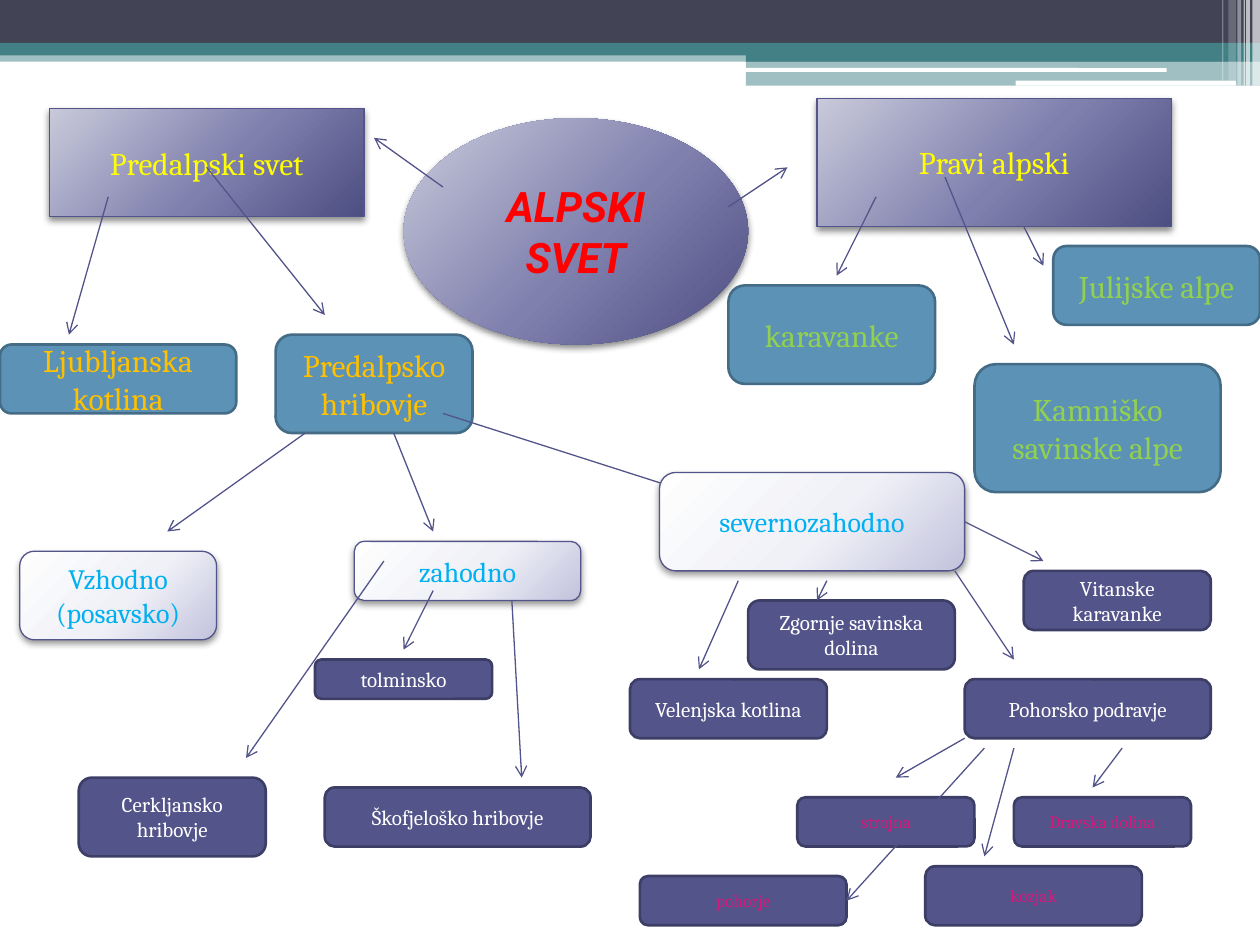
from dataclasses import dataclass

from lxml import etree
from pptx import Presentation
from pptx.dml.color import RGBColor
from pptx.enum.shapes import MSO_CONNECTOR, MSO_SHAPE
from pptx.enum.text import MSO_ANCHOR, PP_ALIGN
from pptx.oxml import parse_xml
from pptx.oxml.ns import nsdecls, qn
from pptx.util import Inches, Pt

RECTANGLE, ROUNDED, OVAL = MSO_SHAPE.RECTANGLE, MSO_SHAPE.ROUNDED_RECTANGLE, MSO_SHAPE.OVAL
STRAIGHT, MIDDLE, CENTER = MSO_CONNECTOR.STRAIGHT, MSO_ANCHOR.MIDDLE, PP_ALIGN.CENTER
BLANK_LAYOUT, RIGHT_SIDE = 6, 3
SLIDE_BOX = (0, 0, 10, 7.5)
PURPLE, TEAL, WHITE = "53548A", "438086", "FFFFFF"
DARK_STOPS = [(0, "C9C9DA"), (55, "7F80AE"), (100, "4D4E81")]
PALE_STOPS = [(0, "FEFEFE"), (55, "F0F1F7"), (100, "C2C2DD")]

DARK = {"stops": DARK_STOPS, "shadow": 45, "line": (PURPLE, 0.75)}
BLUE = {"kind": ROUNDED, "fill": "5C92B5", "line": ("446C86", 1.5)}
NAVY = {"kind": ROUNDED, "fill": PURPLE, "line": ("3D3E66", 1.5)}
STYLES = {
    "centre": DARK | {"kind": OVAL, "line": None, "color": "FF0000",
                      "font": {"size": Pt(24), "name": "Roboto", "bold": True, "italic": True}},
    "region": DARK | {"kind": RECTANGLE, "color": "FFFF00", "font": {"size": Pt(18)}},
    "foothill": BLUE | {"color": "FFC000", "font": {"size": Pt(18)}},
    "alp": BLUE | {"color": "92D050", "font": {"size": Pt(18)}},
    "part": {"kind": ROUNDED, "stops": PALE_STOPS, "shadow": 40, "line": (PURPLE, 0.75),
             "color": "00B0F0", "font": {"size": Pt(16)}},
    "place": NAVY | {"color": WHITE, "font": {"size": Pt(12)}},
    "detail": NAVY | {"color": "D61A7C", "font": {"size": Pt(10)}},
}

HEADER_BANDS = [
    (RECTANGLE, (0, 40, 1000, 9), TEAL, 50),
    (RECTANGLE, (0, 0, 1000, 34), "424456", 100),
    (RECTANGLE, (0, 34, 1000, 10), TEAL, 100),
    (RECTANGLE, (592, 39, 408, 10), TEAL, 100),
    (RECTANGLE, (592, 48, 408, 20), TEAL, 50),
    (ROUNDED, (591, 54, 335, 3), WHITE, 100),
    (ROUNDED, (806, 64, 175, 4), WHITE, 100),
]
HEADER_STRIPES = [(994, 6, 68, 65), (989, 3, 68, 65), (987, 1, 68, 60),
                  (982, 3, 68, 40), (975, 6, 64, 20), (970, 1, 64, 30)]

REGIONS = {
    "nodes": [("ALPSKI SVET", "centre", (41, 12, 35, 23)),
              ("Predalpski svet", "region", (5, 11, 32, 11)),
              ("Pravi alpski", "region", (83, 10, 36, 13))],
    "arrows": [(74, 21, 80, 17), (45, 19, 38, 14), (11, 20, 7, 34), (21, 17, 33, 32)],
}
RANGES = {
    "nodes": [("Ljubljanska kotlina", "foothill", (0, 35, 24, 7)),
              ("Predalpsko hribovje", "foothill", (28, 34, 20, 10)),
              ("karavanke", "alp", (74, 29, 21, 10)),
              ("Julijske alpe", "alp", (107, 25, 21, 8)),
              ("Kamniško savinske alpe", "alp", (99, 37, 25, 13))],
    "arrows": [(89, 20, 85, 28), (104, 23, 106, 27), (96, 18, 103, 35),
               (31, 44, 17, 54), (40, 44, 44, 54), (45, 42, 70, 50)],
}
WEST = {
    "nodes": [("Vzhodno (posavsko)", "part", (2, 56, 20, 9)),
              ("zahodno", "part", (36, 55, 23, 6)),
              ("severnozahodno", "part", (67, 48, 31, 10)),
              ("tolminsko", "place", (32, 67, 18, 4)),
              ("Cerkljansko hribovje", "place", (8, 79, 19, 8)),
              ("Škofjeloško hribovje", "place", (33, 80, 27, 6))],
    "arrows": [(52, 61, 53, 79), (44, 60, 41, 66), (39, 57, 25, 77)],
}
NORTHWEST = {
    "nodes": [("Velenjska kotlina", "place", (64, 69, 20, 6)),
              ("Zgornje savinska dolina", "place", (76, 61, 21, 7)),
              ("Vitanske karavanke", "place", (104, 58, 19, 6)),
              ("Pohorsko podravje", "place", (98, 69, 25, 6))],
    "arrows": [(75, 59, 71, 68), (84, 59, 83, 61), (98, 53, 106, 57), (97, 58, 103, 67)],
}
PODRAVJE = {
    "nodes": [("strojna", "detail", (81, 81, 18, 5)),
              ("Dravska dolina", "detail", (103, 81, 18, 5)),
              ("pohorje", "detail", (65, 89, 21, 5)),
              ("kozjak", "detail", (94, 88, 22, 6))],
    "arrows": [(98, 75, 91, 79), (114, 76, 111, 80), (103, 76, 100, 87), (100, 76, 86, 91.5)],
}


@dataclass
class Grid:
    """Divides a box in inches into equal columns and rows."""
    box: tuple
    columns: int
    rows: int

    def point(self, column, row):
        """Return the slide position of a grid point."""
        left, top, width, height = self.box
        return Inches(left + width * column / self.columns), Inches(top + height * row / self.rows)

    def area(self, column, row, wide, high):
        """Return left, top, width and height of a grid area."""
        left, top = self.point(column, row)
        right, bottom = self.point(column + wide, row + high)
        return left, top, right - left, bottom - top


def rgb(value):
    """Turn a hex string into a colour."""
    return RGBColor.from_string(value)


def set_attributes(target, values):
    """Set each attribute named in a dict."""
    for name, value in values.items():
        setattr(target, name, value)


def fill_solid(shape, color, opacity=100):
    """Fill a shape with one colour at a percentage of opacity."""
    shape.fill.solid()
    shape.fill.fore_color.rgb = rgb(color)
    if opacity < 100:
        element = shape._element.spPr.find(".//" + qn("a:srgbClr"))
        etree.SubElement(element, qn("a:alpha"), val=str(opacity * 1000))


def fill_gradient(shape, stops):
    """Fill a shape with a circular gradient from beyond its upper left."""
    marks = "".join(f'<a:gs pos="{share * 1000}"><a:srgbClr val="{color}"/></a:gs>'
                    for share, color in stops)
    shape._element.spPr.insert(2, parse_xml(
        f'<a:gradFill {nsdecls("a")} rotWithShape="1"><a:gsLst>{marks}</a:gsLst>'
        '<a:path path="circle"><a:fillToRect l="-40000" t="-90000" r="140000" b="190000"/>'
        '</a:path></a:gradFill>'))


def add_shadow(shape, opacity):
    """Add a soft black shadow below a shape."""
    shape._element.spPr.find(qn("a:effectLst")).append(parse_xml(
        f'<a:outerShdw {nsdecls("a")} blurRad="{Pt(4)}" dist="{Pt(2)}" dir="5400000" '
        f'rotWithShape="0"><a:srgbClr val="000000"><a:alpha val="{opacity * 1000}"/>'
        '</a:srgbClr></a:outerShdw>'))


def add_plain_shape(slide, kind, area, line=None):
    """Add a shape without shadow, outlined only when a line is given."""
    shape = slide.shapes.add_shape(kind, *area)
    shape.shadow.inherit = False
    if line:
        shape.line.color.rgb, shape.line.width = rgb(line[0]), Pt(line[1])
    else:
        shape.line.fill.background()
    return shape


def add_node(slide, area, text, style):
    """Add one labelled node of the concept map."""
    shape = add_plain_shape(slide, style["kind"], area, style["line"])
    if "stops" in style:
        fill_gradient(shape, style["stops"])
        add_shadow(shape, style["shadow"])
    else:
        fill_solid(shape, style["fill"])
    set_attributes(shape.text_frame, {"word_wrap": True, "vertical_anchor": MIDDLE})
    paragraph = shape.text_frame.paragraphs[0]
    set_attributes(paragraph, {"text": text, "alignment": CENTER})
    font = paragraph.runs[0].font
    set_attributes(font, {"name": "Cambria"} | style["font"])
    font.color.rgb = rgb(style["color"])
    return shape


def add_arrow(slide, start, end):
    """Add a thin line with an open arrowhead at its end."""
    arrow = slide.shapes.add_connector(STRAIGHT, *start, *end)
    arrow.line.color.rgb, arrow.line.width = rgb(PURPLE), Pt(0.75)
    etree.SubElement(arrow.line._get_or_add_ln(), qn("a:tailEnd"), type="arrow")
    etree.SubElement(arrow._element.spPr, qn("a:effectLst"))
    return arrow


def draw_header(slide, box):
    """Draw the bands and translucent stripes along the top of the box."""
    grid = Grid(box, 1000, 750)
    stripes = [(RECTANGLE, (column, 0, wide, high), WHITE, opacity)
               for column, wide, high, opacity in HEADER_STRIPES]
    for kind, place, color, opacity in HEADER_BANDS + stripes:
        fill_solid(add_plain_shape(slide, kind, grid.area(*place)), color, opacity)


def draw_level(slide, box, level):
    """Draw one level of the map and return its nodes and arrows."""
    grid = Grid(box, 128, 96)
    nodes = {text: add_node(slide, grid.area(*place), text, STYLES[style])
             for text, style, place in level["nodes"]}
    arrows = [add_arrow(slide, grid.point(*ends[:2]), grid.point(*ends[2:]))
              for ends in level["arrows"]]
    return nodes, arrows


def main():
    """Build the concept map and save it."""
    presentation = Presentation()
    presentation.slide_width, presentation.slide_height = Inches(10), Inches(7.5)
    slide = presentation.slides.add_slide(presentation.slide_layouts[BLANK_LAYOUT])
    draw_header(slide, SLIDE_BOX)
    for level in (REGIONS, RANGES):
        draw_level(slide, SLIDE_BOX, level)
    parts, _ = draw_level(slide, SLIDE_BOX, WEST)
    _, place_arrows = draw_level(slide, SLIDE_BOX, NORTHWEST)
    place_arrows[2].begin_connect(parts["severnozahodno"], RIGHT_SIDE)
    details, detail_arrows = draw_level(slide, SLIDE_BOX, PODRAVJE)
    detail_arrows[-1].end_connect(details["pohorje"], RIGHT_SIDE)
    presentation.save("out.pptx")


if __name__ == "__main__":
    main()
